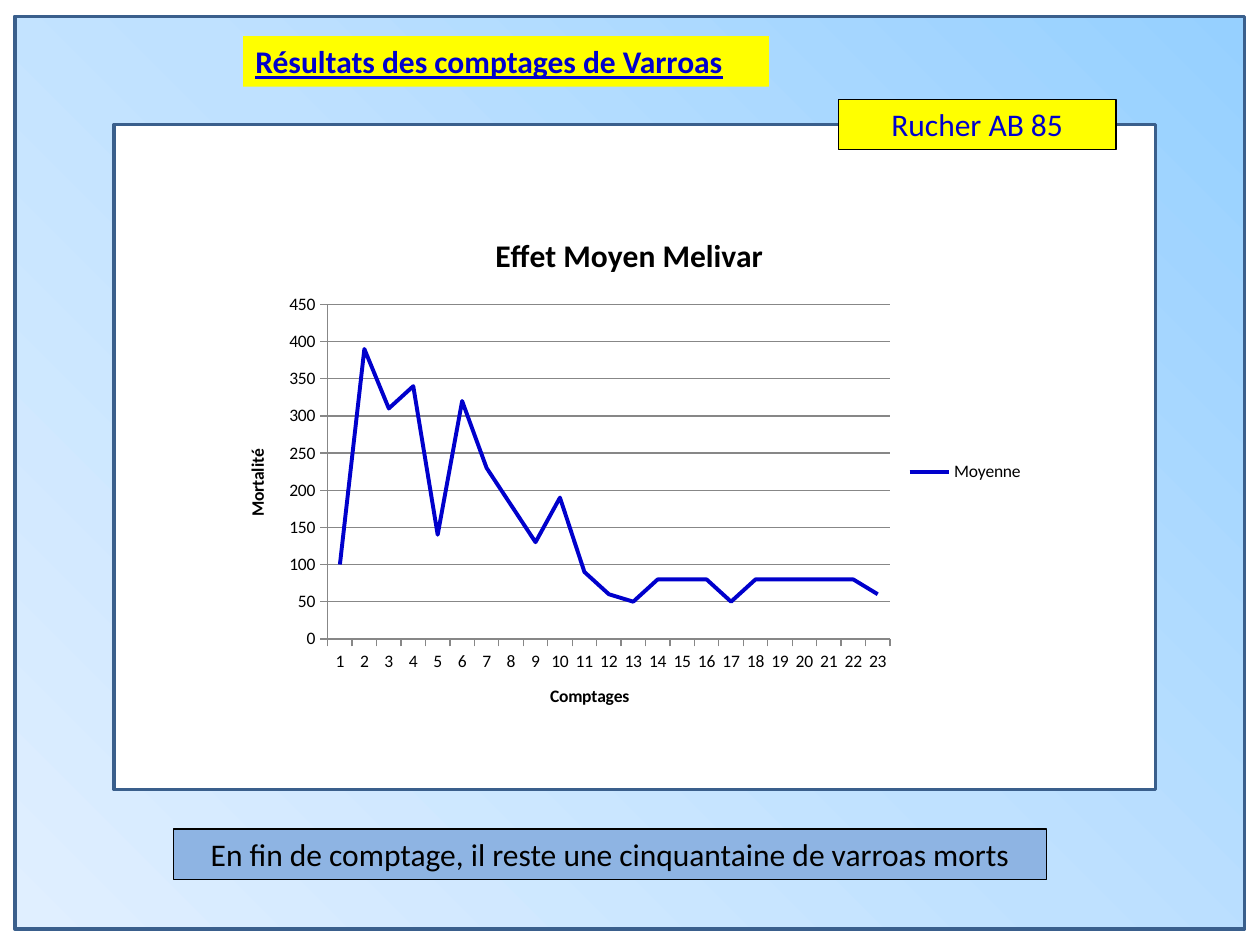
from lxml import etree
from pptx import Presentation
from pptx.chart.data import CategoryChartData
from pptx.dml.color import RGBColor
from pptx.enum.chart import XL_CHART_TYPE as ChartType
from pptx.enum.chart import XL_LEGEND_POSITION as LegendPosition
from pptx.enum.chart import XL_TICK_MARK as TickMark
from pptx.enum.shapes import MSO_SHAPE as Shape
from pptx.enum.text import PP_ALIGN as Align
from pptx.oxml.ns import qn
from pptx.util import Cm, Pt

COLOURS = {
    "sky": "96D0FF", "pale_sky": "BFE1FF", "mist": "E0EFFF",
    "frame": "3A5F8C", "yellow": "FFFF00", "blue": "0000CC",
    "note": "8EB4E3", "white": "FFFFFF", "black": "000000", "grid": "878787",
}
FONT = "Calibri"
COUNTS = (100, 390, 310, 340, 140, 320, 230, 180, 130, 190, 90, 60,
          50, 80, 80, 80, 50, 80, 80, 80, 80, 80, 60)


def colour(name):
    return RGBColor.from_string(COLOURS[name])


def lengths(box):
    return [Cm(value) for value in box]


class SlideBuilder:
    def __init__(self, slide):
        self.slide = slide

    def style_font(self, font, size, name="black", bold=False, underline=False):
        font.name, font.size = FONT, Pt(size)
        font.bold, font.underline = bold, underline
        font.color.rgb = colour(name)

    def panel(self, box, fill="white"):
        shape = self.slide.shapes.add_shape(Shape.RECTANGLE, *lengths(box))
        shape.shadow.inherit = False
        shape.fill.solid()
        shape.fill.fore_color.rgb = colour(fill)
        shape.line.color.rgb = colour("frame")
        shape.line.width = Pt(2)
        return shape

    def radial_fill(self, shape, names):
        """Spread the colours evenly outwards from the top right corner."""
        shape.fill.gradient()
        gradient = shape._element.spPr.find(qn("a:gradFill"))
        for child in list(gradient):
            gradient.remove(child)
        stops = etree.SubElement(gradient, qn("a:gsLst"))
        for index, name in enumerate(names):
            position = str(100000 * index // (len(names) - 1))
            stop = etree.SubElement(stops, qn("a:gs"), pos=position)
            etree.SubElement(stop, qn("a:srgbClr"), val=COLOURS[name])
        circle = etree.SubElement(gradient, qn("a:path"), {"path": "circle"})
        etree.SubElement(circle, qn("a:fillToRect"), l="100000", b="100000")

    def label(self, box, text, fill, name, align=Align.CENTER, border=True, **style):
        shape = self.slide.shapes.add_textbox(*lengths(box))
        shape.fill.solid()
        shape.fill.fore_color.rgb = colour(fill)
        if border:
            shape.line.color.rgb = colour("black")
            shape.line.width = Pt(0.75)
        shape.text_frame.word_wrap = True
        shape.text_frame.text = text
        paragraph = shape.text_frame.paragraphs[0]
        paragraph.alignment = align
        self.style_font(paragraph.runs[0].font, 18, name, **style)

    def title(self, owner, text, size):
        owner.has_title = True
        frame = (owner.chart_title if hasattr(owner, "chart_title")
                 else owner.axis_title).text_frame
        frame.text = text
        self.style_font(frame.paragraphs[0].runs[0].font, size, bold=True)

    def line_chart(self, box, title, series_name, values, axis_titles, plot_area):
        data = CategoryChartData(number_format="0")
        data.categories = [str(number) for number in range(1, len(values) + 1)]
        data.add_series(series_name, values)
        chart = self.slide.shapes.add_chart(ChartType.LINE, *lengths(box), data).chart
        self.style_font(chart.font, 10)
        self.title(chart, title, 18)

        # Axes
        for axis, text in zip((chart.category_axis, chart.value_axis), axis_titles):
            self.title(axis, text, 10)
            axis.major_tick_mark = TickMark.OUTSIDE
            axis.format.line.color.rgb = colour("grid")
        value_axis = chart.value_axis
        value_axis.minimum_scale, value_axis.maximum_scale = 0, 450
        value_axis.major_unit = 50
        value_axis.major_gridlines.format.line.color.rgb = colour("grid")

        # Legend and series
        chart.has_legend = True
        chart.legend.position = LegendPosition.RIGHT
        chart.legend.include_in_layout = False
        series = chart.plots[0].series[0]
        series.smooth = False
        series.format.line.color.rgb = colour("blue")
        series.format.line.width = Pt(2.25)

        # Inner plot area, as fractions of the chart
        area = chart._chartSpace.chart.plotArea
        layout = area.find(qn("c:layout"))
        if layout is None:
            layout = etree.Element(qn("c:layout"))
            area.insert(0, layout)
        manual = etree.SubElement(layout, qn("c:manualLayout"))
        settings = [("layoutTarget", "inner"), ("xMode", "edge"), ("yMode", "edge")]
        for tag, value in settings + list(zip("xywh", plot_area)):
            etree.SubElement(manual, qn(f"c:{tag}"), val=str(value))


def main():
    presentation = Presentation()
    presentation.slide_width, presentation.slide_height = Cm(25.4), Cm(19.05)
    builder = SlideBuilder(presentation.slides.add_slide(presentation.slide_layouts[6]))

    # Background and heading
    background = builder.panel((0.3, 0.33, 24.79, 18.4))
    builder.radial_fill(background, ("sky", "pale_sky", "mist"))
    builder.label((4.9, 0.73, 10.6, 1.02), "Résultats des comptages de Varroas",
                  "yellow", "blue", Align.LEFT, border=False, bold=True, underline=True)

    # Chart panel
    builder.panel((2.3, 2.51, 21, 13.41))
    builder.label((16.9, 2, 5.6, 1.02), "Rucher AB 85", "yellow", "blue")
    builder.line_chart((4.47, 4.24, 16.43, 10.54), "Effet Moyen Melivar", "Moyenne",
                       COUNTS, ("Comptages", "Mortalité"), (0.13, 0.18, 0.69, 0.64))

    # Conclusion
    builder.label((3.5, 16.71, 17.6, 1.02),
                  "En fin de comptage, il reste une cinquantaine de varroas morts",
                  "note", "black")
    presentation.save("out.pptx")


if __name__ == "__main__":
    main()
